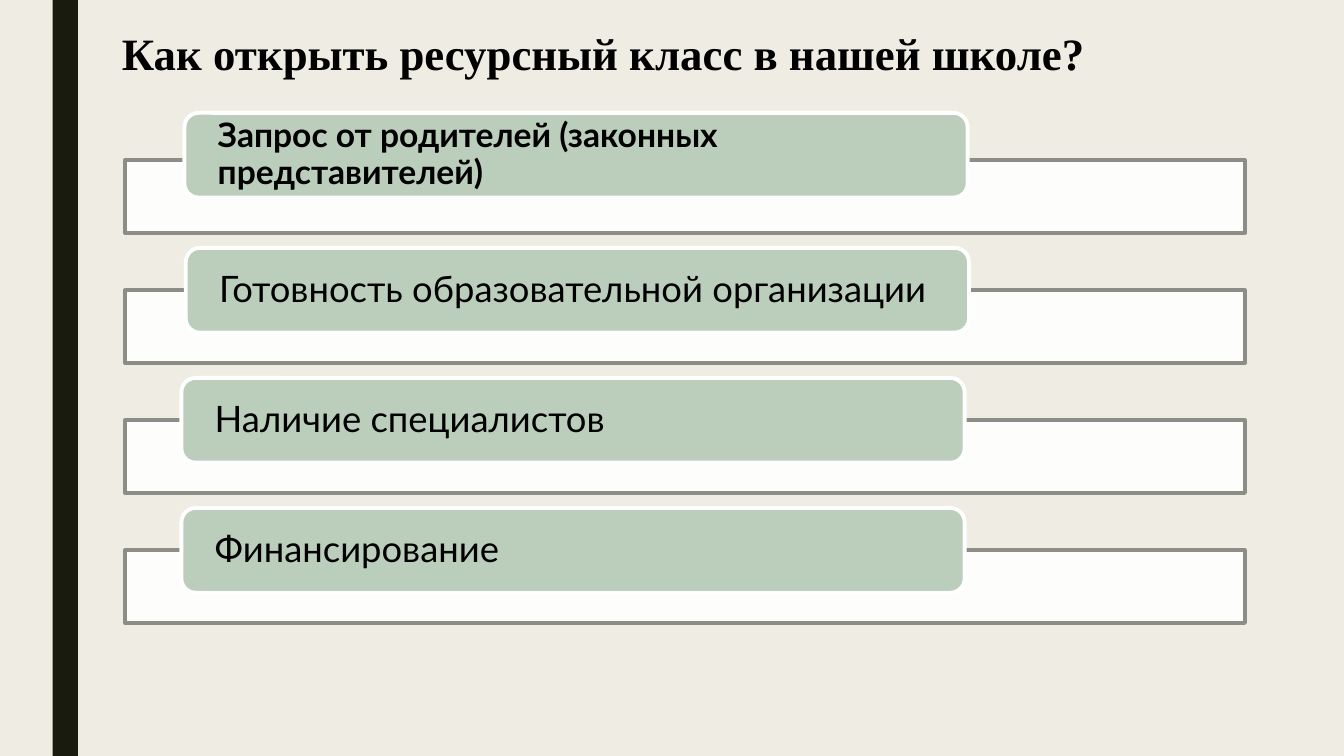
from lxml.etree import SubElement
from pptx import Presentation
from pptx.dml.color import RGBColor
from pptx.enum.shapes import MSO_SHAPE
from pptx.enum.text import MSO_ANCHOR, PP_ALIGN
from pptx.oxml.ns import qn
from pptx.util import Pt

TITLE = "Как открыть ресурсный класс в нашей школе?"
# wording, size, bold, label left, label rise above its bar
STEPS = [
    ("Запрос от родителей (законных представителей)", 24, True, 131.76, 33.84),
    ("Готовность образовательной организации", 26, False, 132.7, 30.24),
    ("Наличие специалистов", 26, False, 129.6, 30.24),
    ("Финансирование", 26, False, 129.6, 30.24),
]
BAR_LEFT, BAR_TOP, BAR_WIDTH, BAR_HEIGHT = 89.28, 114.48, 800, 51.84
BAR_PITCH = 92.88
LABEL_WIDTH, LABEL_HEIGHT, LABEL_INSET = 559.44, 60.48, 20.83


def color(value):
    return RGBColor.from_string(value)


def add_block(kind, left, top, width, height, fill, line=None):
    block = page.shapes.add_shape(kind, Pt(left), Pt(top), Pt(width), Pt(height))
    block.shadow.inherit = False
    block.fill.solid()
    block.fill.fore_color.rgb = color(fill)
    if line:
        block.line.color.rgb = color(line)
        block.line.width = Pt(2.75)
    else:
        block.line.fill.background()
    return block


def write(frame, text, font, size, bold, spacing):
    frame.word_wrap = True
    para = frame.paragraphs[0]
    para.text = text
    para.alignment = PP_ALIGN.LEFT
    para.line_spacing = spacing
    para.font.name = font
    para.font.size = Pt(size)
    para.font.bold = bold
    para.font.color.rgb = color("000000")


deck = Presentation()
deck.slide_width, deck.slide_height = Pt(960), Pt(540)
page = deck.slides.add_slide(deck.slide_layouts[6])
page.background.fill.solid()
page.background.fill.fore_color.rgb = color("EFEDE3")

add_block(MSO_SHAPE.RECTANGLE, 37.6, 0, 18, 540, "191B0E")
title = page.shapes.add_textbox(Pt(79.92), Pt(19.44), Pt(756), Pt(116.64))
write(title.text_frame, TITLE, "Times New Roman", 32, True, 0.89)

for index, (text, size, bold, left, rise) in enumerate(STEPS):
    top = BAR_TOP + index * BAR_PITCH
    bar = add_block(MSO_SHAPE.RECTANGLE, BAR_LEFT, top, BAR_WIDTH, BAR_HEIGHT,
                    "FFFFFF", "8C8D86")
    fill_color = bar.fill._xPr.find(qn("a:solidFill"))[0]
    SubElement(fill_color, qn("a:alpha"), val="90000")

    label = add_block(MSO_SHAPE.ROUNDED_RECTANGLE, left, top - rise,
                      LABEL_WIDTH, LABEL_HEIGHT, "BBCDBB", "FFFFFF")
    frame = label.text_frame
    frame.margin_left = frame.margin_right = Pt(LABEL_INSET)
    frame.margin_top = frame.margin_bottom = 0
    frame.vertical_anchor = MSO_ANCHOR.MIDDLE
    write(frame, text, "Lato", size, bold, 0.9)

deck.save("out.pptx")
